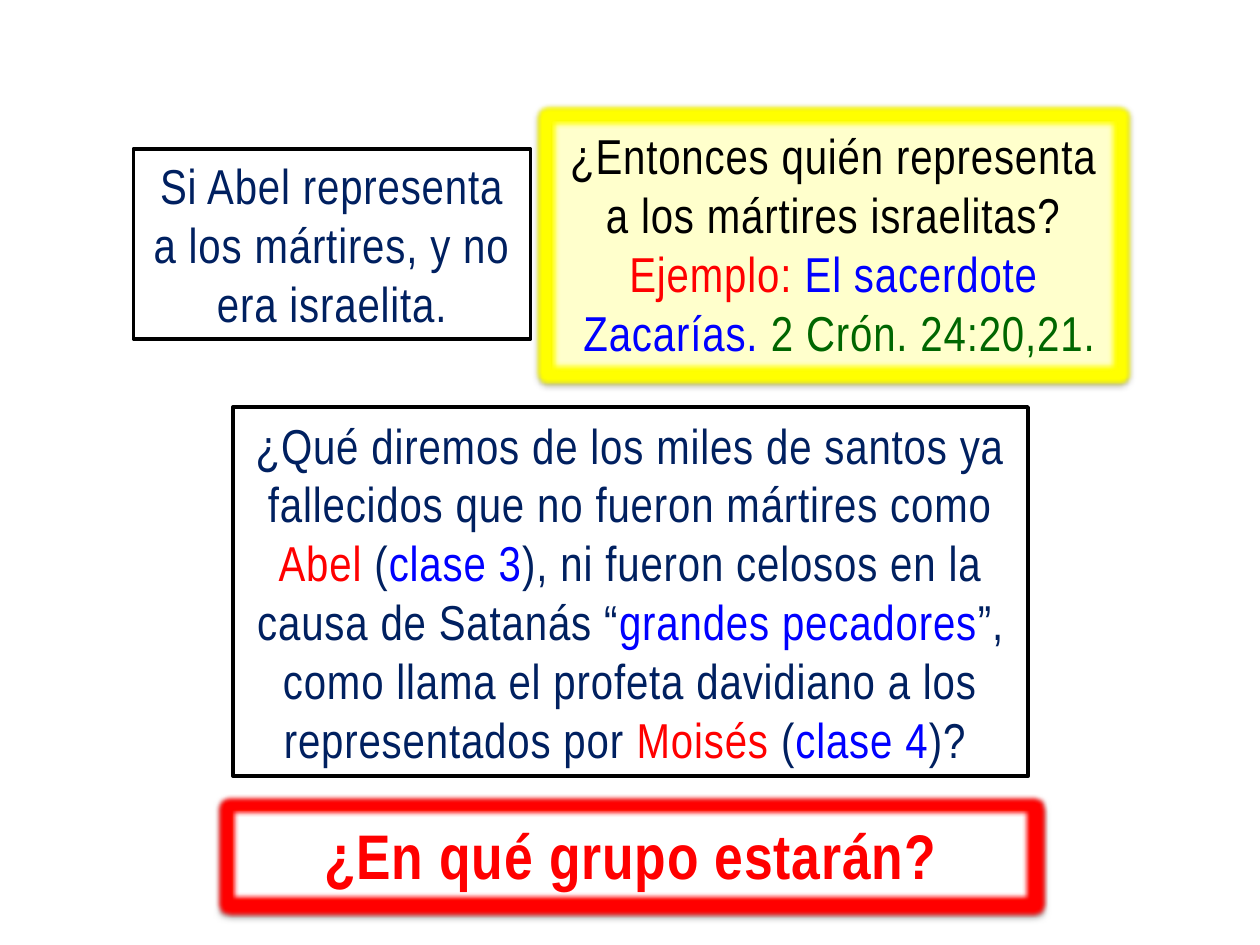
from lxml.etree import SubElement as Sub
from pptx import Presentation
from pptx.dml.color import RGBColor as RGB
from pptx.enum.shapes import MSO_SHAPE as Shape
from pptx.enum.text import MSO_ANCHOR as Anchor, MSO_AUTO_SIZE as Fit, PP_ALIGN as Align
from pptx.oxml.ns import qn
from pptx.util import Pt

FONT = "Arial Narrow"
HEX = {
    "navy": "002060", "black": "000000", "white": "FFFFFF", "cream": "FFFFCC",
    "red": "FF0000", "blue": "0000FF", "sky": "3333FF", "green": "006600",
    "yellow": "FFFF00", "olive": "A5B623", "amber": "F18F00",
}


def rgb(name):
    return RGB.from_string(HEX[name])


def node(parent, tag, **attrs):
    return Sub(parent, qn(tag), {k: str(v) for k, v in attrs.items()})


def style(run, color, edge, size, bold):
    """Set the font, spacing and thin outline of one run."""
    font = run.font
    font.name, font.size, font.bold = FONT, Pt(size), bold
    font.color.rgb = rgb(color)
    props = run._r.get_or_add_rPr()
    props.set("spc", "50")
    line = node(props, "a:ln", w=Pt(1.5))
    node(node(line, "a:solidFill"), "a:srgbClr", val=HEX[edge])
    props.insert(0, line)


def write(box, paras, size=28, bold=False):
    """Fill a box with paragraphs of (text, colour[, outline]) runs."""
    frame = box.text_frame
    for i, parts in enumerate(paras):
        para = frame.paragraphs[0] if i == 0 else frame.add_paragraph()
        para.alignment = Align.CENTER
        for text, color, *edge in parts:
            run = para.add_run()
            run.text = text
            style(run, color, edge[0] if edge else color, size, bold)


def panel(slide, area, fill, line, width, anchor):
    box = slide.shapes.add_shape(Shape.RECTANGLE, *map(Pt, area))
    box.shadow.inherit = False
    box.fill.solid()
    box.fill.fore_color.rgb = rgb(fill)
    box.line.color.rgb = rgb(line)
    box.line.width = Pt(width)
    frame = box.text_frame
    frame.word_wrap = True
    frame.auto_size = Fit.SHAPE_TO_FIT_TEXT
    frame.vertical_anchor = anchor
    return box


def plain(slide, area):
    return panel(slide, area, "white", "black", 2, Anchor.MIDDLE)


def glowing(slide, area, fill, line, glow):
    """Panel with a coloured glow, a low shadow and soft edges."""
    box = panel(slide, area, fill, line, 0.75, Anchor.TOP)
    fx = box._element.spPr.find(qn("a:effectLst"))
    halo = node(fx, "a:glow", rad=Pt(5))
    node(halo, "a:srgbClr", val=HEX[glow])
    shade = node(fx, "a:outerShdw", blurRad=Pt(3.1), dist=Pt(1.6),
                 dir=5400000, rotWithShape=0)
    tint = node(shade, "a:srgbClr", val=HEX["black"])
    node(tint, "a:alpha", val=38000)
    node(fx, "a:softEdge", rad=Pt(2.5))
    return box


def main():
    deck = Presentation()
    deck.slide_width, deck.slide_height = Pt(720), Pt(540)
    slide = deck.slides.add_slide(deck.slide_layouts[6])

    # Premise
    box = plain(slide, (76.3, 85, 226.8, 108.7))
    write(box, [[("Si Abel representa a los mártires, y no era israelita.", "navy")]])

    # Question with its example
    box = glowing(slide, (314.6, 68.4, 323.3, 143.3), "cream", "olive", "yellow")
    write(box, [
        [("¿Entonces quién representa", "black")],
        [(" a los mártires israelitas? ", "black")],
        [("Ejemplo: ", "red"), ("El sacerdote", "blue")],
        [(" Zacarías. ", "blue"), ("2 Crón. 24:20,21.", "green")],
    ])

    # Second question
    box = plain(slide, (133.2, 232.6, 454.3, 211))
    write(box, [[
        ("¿Qué diremos de los miles de santos ya fallecidos que no fueron "
         "mártires como ", "navy"),
        ("Abel", "red"), (" (", "navy"), ("clase 3", "blue", "sky"),
        ("), ni fueron celosos en la causa de Satanás “", "navy"),
        ("grandes pecadores", "blue"),
        ("”, como llama el profeta davidiano a los representados por ", "navy"),
        ("Moisés", "red"), (" (", "navy"), ("clase 4", "blue", "sky"),
        (")? ", "navy"),
    ]])

    # Closing question
    box = glowing(slide, (132.5, 463, 455.8, 51.1), "white", "amber", "red")
    write(box, [[("¿En qué grupo estarán?", "red")]], size=36, bold=True)

    deck.save("out.pptx")


if __name__ == "__main__":
    main()
